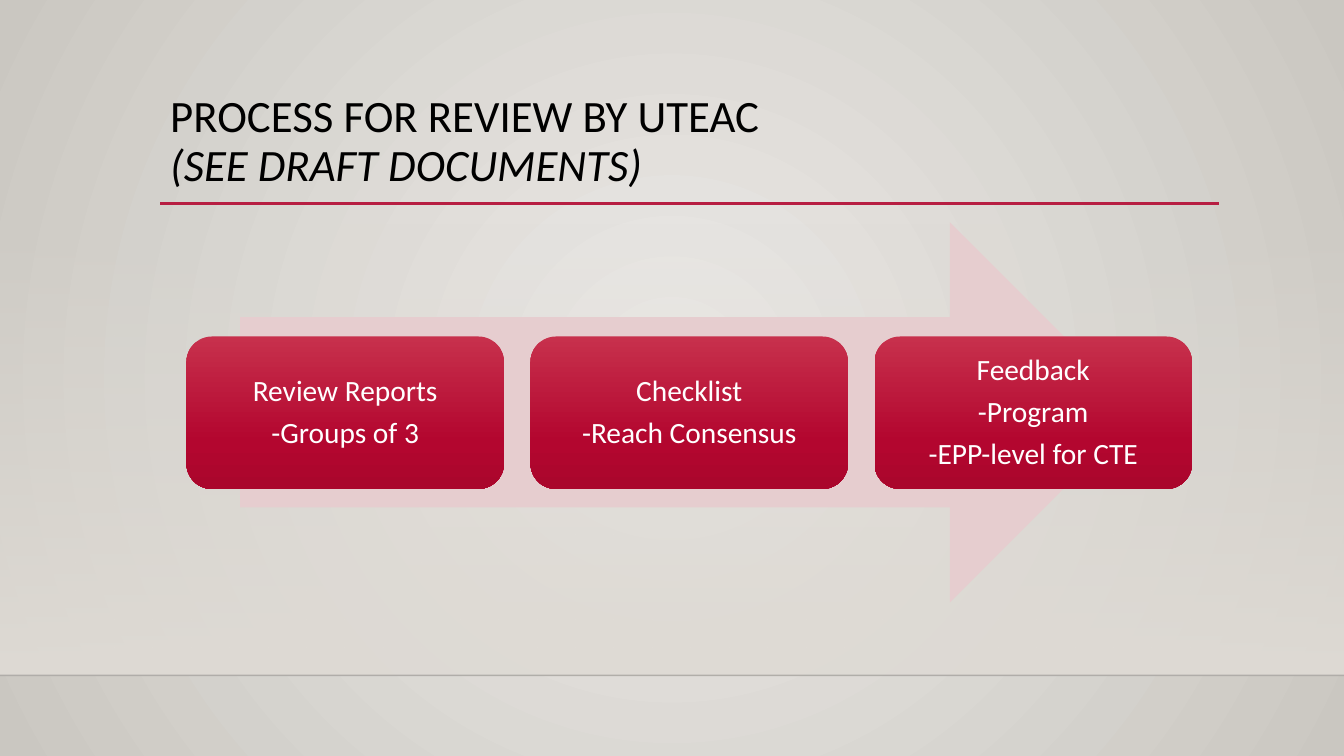
from dataclasses import dataclass

from lxml import etree
from pptx import Presentation
from pptx.dml.color import RGBColor
from pptx.enum.shapes import MSO_CONNECTOR, MSO_SHAPE
from pptx.enum.text import MSO_ANCHOR, MSO_AUTO_SIZE, PP_ALIGN
from pptx.oxml import parse_xml
from pptx.oxml.ns import nsdecls, qn
from pptx.util import Cm, Pt

RECT, ROUND, ARROW = MSO_SHAPE.RECTANGLE, MSO_SHAPE.ROUNDED_RECTANGLE, MSO_SHAPE.RIGHT_ARROW
STRAIGHT = MSO_CONNECTOR.STRAIGHT
TOP, MIDDLE = MSO_ANCHOR.TOP, MSO_ANCHOR.MIDDLE
LEFT, CENTER = PP_ALIGN.LEFT, PP_ALIGN.CENTER
NO_FIT = MSO_AUTO_SIZE.NONE

WIDE, HIGH = 33.87, 19.05
FLOOR = 17.02
RED = "B71E42"
DOWN = '<a:lin ang="5400000" scaled="0"/>'
ROUNDEL = ('<a:path path="circle"><a:fillToRect l="50000" t="50000" '
           'r="50000" b="50000"/></a:path>')


@dataclass
class Stop:
    pos: int
    tone: str
    alpha: int = 100


@dataclass
class Step:
    lines: list[str]


@dataclass
class Rule:
    left: float
    right: float
    top: float
    tone: str
    width: float
    alpha: int = 100


BACK = [Stop(0, "ECEAE7"), Stop(100, "CAC7C1")]
HAZE = [Stop(0, "DFDBD5", 0), Stop(100, "DFDBD5")]
GLOSS = [Stop(0, "C7304C"), Stop(69, "B3062F"), Stop(100, "AA062C")]
STEPS = [
    Step(["Review Reports", "-Groups of 3"]),
    Step(["Checklist", "-Reach Consensus"]),
    Step(["Feedback", "-Program", "-EPP-level for CTE"]),
]
RULES = [
    Rule(0, WIDE, FLOOR, "000001", 1, 20),
    Rule(4.04, 30.73, 5.13, RED, 2.5),
]


def color(tone: str) -> RGBColor:
    return RGBColor.from_string(tone)


def blend(fill, root, stops: list[Stop], way: str) -> None:
    """Give the first fill under root a gradient."""
    fill.solid()
    fill.fore_color.rgb = color(stops[0].tone)
    marks = "".join(
        f'<a:gs pos="{s.pos * 1000}"><a:srgbClr val="{s.tone}">'
        f'<a:alpha val="{s.alpha * 1000}"/></a:srgbClr></a:gs>' for s in stops)
    old = root.xpath(".//a:solidFill")[0]
    old.getparent().replace(old, parse_xml(
        f'<a:gradFill {nsdecls("a")} rotWithShape="1">'
        f"<a:gsLst>{marks}</a:gsLst>{way}</a:gradFill>"))


def add_form(slide, kind, left: float, top: float, width: float, height: float):
    form = slide.shapes.add_shape(kind, Cm(left), Cm(top), Cm(width), Cm(height))
    form.shadow.inherit = False
    form.line.fill.background()
    return form


def add_rule(slide, rule: Rule) -> None:
    line = slide.shapes.add_connector(
        STRAIGHT, Cm(rule.left), Cm(rule.top), Cm(rule.right), Cm(rule.top))
    line.line.color.rgb = color(rule.tone)
    line.line.width = Pt(rule.width)
    props = line.element.spPr
    if rule.alpha < 100:
        hue = props.xpath(".//a:srgbClr")[0]
        etree.SubElement(hue, qn("a:alpha")).set("val", str(rule.alpha * 1000))
    etree.SubElement(props, qn("a:effectLst"))


def set_frame(frame, anchor, side: float, edge: float) -> None:
    looks = {"word_wrap": True, "auto_size": NO_FIT, "vertical_anchor": anchor,
             "margin_left": Cm(side), "margin_right": Cm(side),
             "margin_top": Cm(edge), "margin_bottom": Cm(edge)}
    for name, value in looks.items():
        setattr(frame, name, value)


def set_para(para, align, size: float, tone: str, after: float = 0) -> None:
    looks = {"alignment": align, "line_spacing": 0.9,
             "space_before": Pt(0), "space_after": Pt(after)}
    for name, value in looks.items():
        setattr(para, name, value)
    for run in para.runs:
        for name, value in {"name": "Calibri", "size": Pt(size)}.items():
            setattr(run.font, name, value)
        run.font.color.rgb = color(tone)


def add_step(slide, step: Step, left: float) -> None:
    card = add_form(slide, ROUND, left, 8.48, 8, 3.84)
    blend(card.fill, card.element, GLOSS, DOWN)
    frame = card.text_frame
    set_frame(frame, MIDDLE, 0.42, 0.42)
    frame.text = "\n".join(step.lines)
    for para in frame.paragraphs:
        set_para(para, CENTER, 21, "FFFFFF", 7.35)


def set_title(slide) -> None:
    title = slide.shapes.title
    place = {"left": 4.04, "top": 2.24, "width": 26.67, "height": 2.92}
    for name, value in place.items():
        setattr(title, name, Cm(value))
    set_frame(title.text_frame, TOP, 0.25, 0.13)
    para = title.text_frame.paragraphs[0]
    para.add_run().text = "PROCESS FOR REVIEW BY UTEAC"
    para.add_line_break()
    note = para.add_run()
    note.text = "(SEE DRAFT DOCUMENTS)"
    note.font.italic = True
    set_para(para, LEFT, 32, "000000")


def main() -> None:
    deck = Presentation()
    deck.slide_width, deck.slide_height = Cm(WIDE), Cm(HIGH)
    slide = deck.slides.add_slide(deck.slide_layouts[5])

    # Backdrop
    blend(slide.background.fill, slide.element, BACK, ROUNDEL)
    haze = add_form(slide, RECT, 0, 5.61, WIDE, FLOOR - 5.61)
    blend(haze.fill, haze.element, HAZE, DOWN)
    for rule in RULES:
        add_rule(slide, rule)

    # Title
    set_title(slide)

    # Process arrow and its steps
    arrow = add_form(slide, ARROW, 6.05, 5.6, 22.68, 9.58)
    arrow.fill.solid()
    arrow.fill.fore_color.rgb = color("E6CDCF")
    for i, step in enumerate(STEPS):
        add_step(slide, step, 4.7 + i * 8.67)

    deck.save("out.pptx")


if __name__ == "__main__":
    main()
